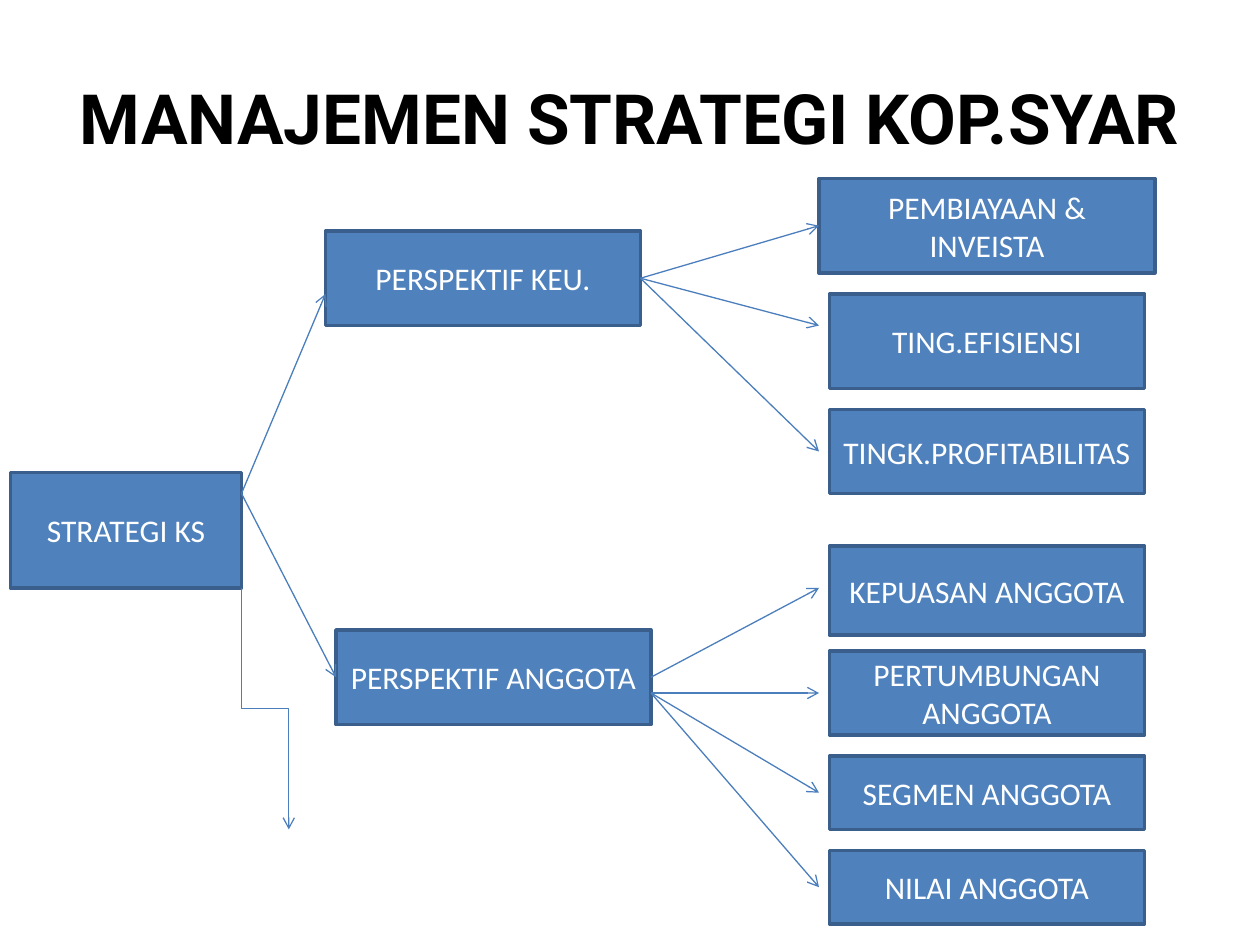
"""Build the cooperative strategy tree slide."""
from dataclasses import dataclass

from lxml import etree
from pptx import Presentation
from pptx import util as u
from pptx.dml.color import RGBColor
from pptx.enum import shapes, text
from pptx.oxml import ns


@dataclass(frozen=True)
class Theme:
    """Colours, fonts and sizes of the slide."""
    fill: str = "4F81BD"
    border: str = "3A5F8C"
    arrow: str = "4B7EBC"
    label: str = "FFFFFF"
    title: str = "000000"
    title_font: str = "Roboto"
    label_font: str = "Calibri"
    title_size: float = 39.6
    label_size: float = 18
    border_width: float = 2
    arrow_width: float = 0.75


THEME = Theme()
LEAF_LEFT, BRANCH_WIDTH, ARROW_END = 474, 180, 468

BOXES = [
    ("STRATEGI KS", 6, 270, 132, 66),
    ("PERSPEKTIF KEU.", 186, 132, BRANCH_WIDTH, 54),
    ("PERSPEKTIF ANGGOTA", 192, 360, BRANCH_WIDTH, 54),
    ("PEMBIAYAAN & INVEISTA", 468, 102, 192, 54),
]
LEAVES = [
    ("TING.EFISIENSI", 168, 54),
    ("TINGK.PROFITABILITAS", 234, 48),
    ("KEPUASAN ANGGOTA", 312, 51),
    ("PERTUMBUNGAN ANGGOTA", 372, 48),
    ("SEGMEN ANGGOTA", 432, 42),
    ("NILAI ANGGOTA", 486, 42),
]
FANS = [
    ((138, 282), [(186, 168), (192, 387)]),
    ((366, 159), [(ARROW_END, y) for y in (129, 186, 258)]),
    ((372, 387), [(ARROW_END, 336)]),
    ((372, 396), [(ARROW_END, y) for y in (396, 453, 507)]),
]


def points(*values):
    """Convert numbers to lengths in points."""
    return [u.Pt(value) for value in values]


def write(shape, words, font, size, colour, bold=False):
    """Put one centred paragraph in a shape."""
    frame = shape.text_frame
    frame.word_wrap = True
    frame.vertical_anchor = text.MSO_ANCHOR.MIDDLE
    para = frame.paragraphs[0]
    para.text = words
    para.alignment = text.PP_ALIGN.CENTER
    para.font.name = font
    para.font.size = u.Pt(size)
    para.font.bold = bold
    para.font.color.rgb = RGBColor.from_string(colour)


def add_title(page, words):
    """Add the slide heading."""
    box = page.shapes.add_textbox(*points(36, 21.6, 648, 90))
    write(box, words, THEME.title_font, THEME.title_size, THEME.title, bold=True)


def add_box(page, words, left, top, width, height):
    """Add a labelled rectangle."""
    box = page.shapes.add_shape(
        shapes.MSO_SHAPE.RECTANGLE, *points(left, top, width, height))
    box.shadow.inherit = False
    box.fill.solid()
    box.fill.fore_color.rgb = RGBColor.from_string(THEME.fill)
    box.line.color.rgb = RGBColor.from_string(THEME.border)
    box.line.width = u.Pt(THEME.border_width)
    write(box, words, THEME.label_font, THEME.label_size, THEME.label)


def add_arrow(page, start, end, kind=shapes.MSO_CONNECTOR.STRAIGHT):
    """Add a connector with an open arrowhead at its end."""
    arrow = page.shapes.add_connector(kind, *points(*start, *end))
    arrow.line.color.rgb = RGBColor.from_string(THEME.arrow)
    arrow.line.width = u.Pt(THEME.arrow_width)
    etree.SubElement(arrow.line._get_or_add_ln(), ns.qn("a:tailEnd"), type="arrow")
    etree.SubElement(arrow._element.spPr, ns.qn("a:effectLst"))
    return arrow


def add_down_elbow(page, start, end):
    """Add an elbow arrow that leaves downwards, as a quarter-turned connector."""
    middle_x, middle_y = (start[0] + end[0]) / 2, (start[1] + end[1]) / 2
    half_run, half_drop = (end[0] - start[0]) / 2, (end[1] - start[1]) / 2
    arrow = add_arrow(
        page,
        (middle_x + half_drop, middle_y - half_run),
        (middle_x - half_drop, middle_y + half_run),
        shapes.MSO_CONNECTOR.ELBOW)
    arrow._element.spPr.find(ns.qn("a:xfrm")).set("rot", str(270 * 60000))


def main():
    """Build and save the deck."""
    deck = Presentation()
    deck.slide_width, deck.slide_height = points(720, 540)
    page = deck.slides.add_slide(deck.slide_layouts[6])
    add_title(page, "MANAJEMEN STRATEGI KOP.SYAR")
    for box in BOXES:
        add_box(page, *box)
    for words, top, height in LEAVES:
        add_box(page, words, LEAF_LEFT, top, BRANCH_WIDTH, height)
    for start, ends in FANS:
        for end in ends:
            add_arrow(page, start, end)
    add_down_elbow(page, (138, 336), (165, 474))
    deck.save("out.pptx")


if __name__ == "__main__":
    main()
